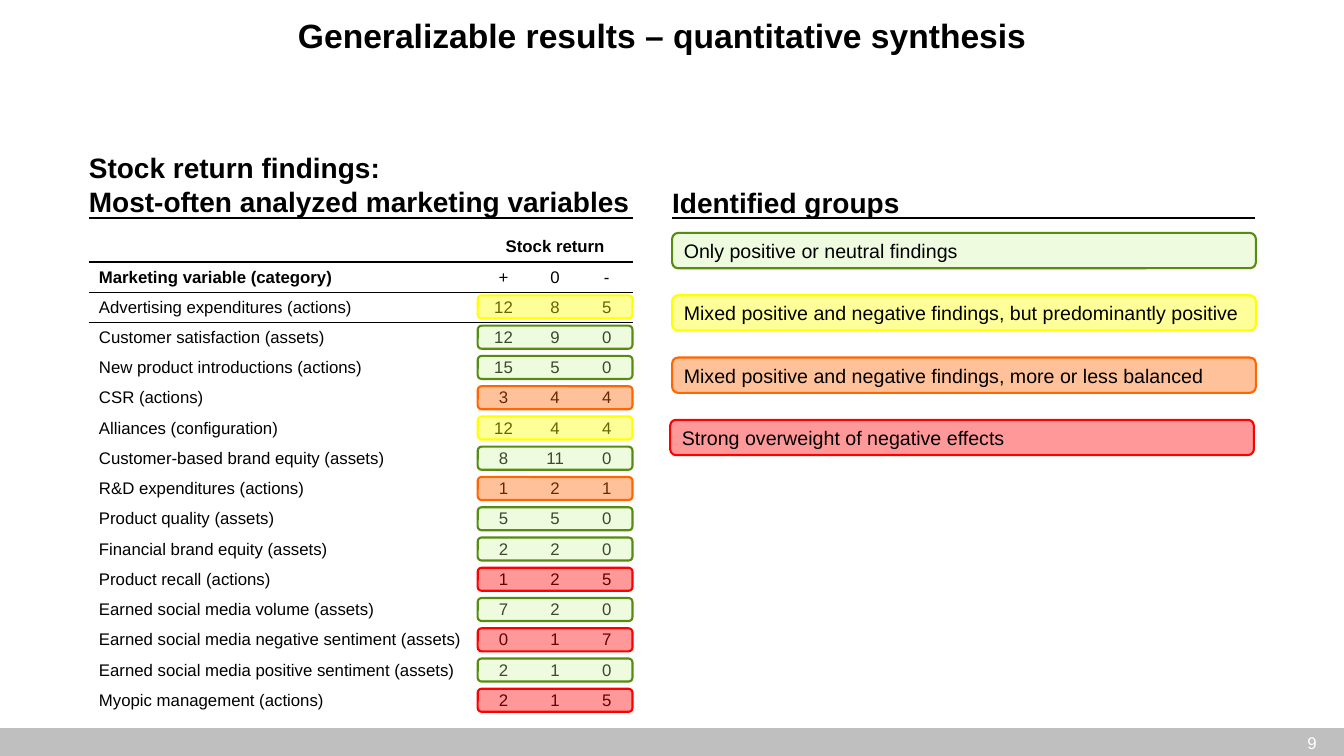
from dataclasses import dataclass

from lxml.etree import SubElement
from pptx import Presentation
from pptx.dml.color import RGBColor
from pptx.enum.shapes import MSO_CONNECTOR, MSO_SHAPE
from pptx.enum.text import MSO_ANCHOR as Anchor, MSO_AUTO_SIZE as AutoSize, PP_ALIGN as Align
from pptx.oxml import parse_xml
from pptx.oxml.ns import nsdecls, qn
from pptx.util import Cm, Pt

BLACK = "000000"
GRAY = "BFBFBF"
WHITE = "FFFFFF"
NO_GRID_STYLE = "{2D5ABB26-0587-4C30-8999-92F81FD0307C}"

LEFT, RIGHT = 2.24, 16.94
TABLE_TOP, ROW_HEIGHT = 5.84, 12.2 / 16
NAME_WIDTH, COUNT_WIDTH = 9.8, 1.3
LEGEND_TOP, LEGEND_STEP = 5.87, 1.57


@dataclass(frozen=True)
class Group:
    label: str
    fill: str
    opacity: int
    line: str
    left: float = RIGHT


@dataclass(frozen=True)
class Variable:
    name: str
    counts: tuple[int, int, int]
    group: Group


POSITIVE = Group("Only positive or neutral findings", "CAF297", 30, "568D11")
MOSTLY_POSITIVE = Group(
    "Mixed positive and negative findings, but predominantly positive", "FFFF00", 40, "FFFF00")
BALANCED = Group(
    "Mixed positive and negative findings, more or less balanced", "FF6600", 40, "FF6600")
NEGATIVE = Group("Strong overweight of negative effects", "FF0000", 40, "FF0000", 16.89)
GROUPS = [POSITIVE, MOSTLY_POSITIVE, BALANCED, NEGATIVE]

VARIABLES = [
    Variable("Advertising expenditures (actions)", (12, 8, 5), MOSTLY_POSITIVE),
    Variable("Customer satisfaction (assets)", (12, 9, 0), POSITIVE),
    Variable("New product introductions (actions)", (15, 5, 0), POSITIVE),
    Variable("CSR (actions)", (3, 4, 4), BALANCED),
    Variable("Alliances (configuration)", (12, 4, 4), MOSTLY_POSITIVE),
    Variable("Customer-based brand equity (assets)", (8, 11, 0), POSITIVE),
    Variable("R&D expenditures (actions)", (1, 2, 1), BALANCED),
    Variable("Product quality (assets)", (5, 5, 0), POSITIVE),
    Variable("Financial brand equity (assets)", (2, 2, 0), POSITIVE),
    Variable("Product recall (actions)", (1, 2, 5), NEGATIVE),
    Variable("Earned social media volume (assets)", (7, 2, 0), POSITIVE),
    Variable("Earned social media negative sentiment (assets)", (0, 1, 7), NEGATIVE),
    Variable("Earned social media positive sentiment (assets)", (2, 1, 0), POSITIVE),
    Variable("Myopic management (actions)", (2, 1, 5), NEGATIVE),
]


def rgb(color: str) -> RGBColor:
    return RGBColor.from_string(color)


def write(frame, text: str, *, size: float, color: str = BLACK, bold: bool = False,
          align=Align.LEFT, spacing: float = 1.0) -> None:
    for index, line in enumerate(text.split("\n")):
        para = frame.add_paragraph() if index else frame.paragraphs[0]
        para.alignment = align
        para.line_spacing = spacing
        span = para.add_run()
        span.text = line
        span.font.name = "Arial"
        span.font.size = Pt(size)
        span.font.bold = bold
        span.font.color.rgb = rgb(color)


def add_text(page, left: float, top: float, width: float, height: float, text: str,
             *, anchor=Anchor.TOP, **style) -> None:
    box = page.shapes.add_textbox(Cm(left), Cm(top), Cm(width), Cm(height))
    box.text_frame.word_wrap = True
    box.text_frame.vertical_anchor = anchor
    write(box.text_frame, text, **style)


def add_heading(page, left: float, top: float, width: float, height: float,
                text: str, rule_width: float) -> None:
    box = page.shapes.add_textbox(Cm(left), Cm(top), Cm(width), Cm(height))
    frame = box.text_frame
    frame.word_wrap = False
    frame.auto_size = AutoSize.SHAPE_TO_FIT_TEXT
    frame.vertical_anchor = Anchor.BOTTOM
    frame.margin_left = 0
    write(frame, text, size=20, bold=True)
    rule = page.shapes.add_connector(
        MSO_CONNECTOR.STRAIGHT, Cm(left), Cm(5.49), Cm(left + rule_width), Cm(5.49))
    rule.line.color.rgb = rgb(BLACK)
    rule.line.width = Pt(1)
    SubElement(rule._element.spPr, qn("a:effectLst"))


def add_block(page, kind, left: float, top: float, width: float, height: float,
              *, fill: str, line: str, weight: float):
    block = page.shapes.add_shape(kind, Cm(left), Cm(top), Cm(width), Cm(height))
    block.shadow.inherit = False
    block.fill.solid()
    block.fill.fore_color.rgb = rgb(fill)
    block.line.color.rgb = rgb(line)
    block.line.width = Pt(weight)
    return block


def add_marker(page, group: Group, left: float, top: float, width: float, height: float):
    marker = add_block(page, MSO_SHAPE.ROUNDED_RECTANGLE, left, top, width, height,
                       fill=group.fill, line=group.line, weight=1.5)
    color = marker._element.spPr.find(qn("a:solidFill"))[0]
    SubElement(color, qn("a:alpha"), val=str(group.opacity * 1000))
    return marker


def add_border(cell, side: str) -> None:
    border = parse_xml(
        f'<a:{side} {nsdecls("a")} w="12700"><a:solidFill>'
        f'<a:srgbClr val="{BLACK}"/></a:solidFill></a:{side}>')
    cell._tc.get_or_add_tcPr().insert(0, border)


def fill_cell(cell, text: str, *, bold: bool = False, align=Align.LEFT) -> None:
    cell.vertical_anchor = Anchor.MIDDLE
    cell.margin_top = cell.margin_bottom = 0
    cell.fill.background()
    write(cell.text_frame, text, size=12, bold=bold, align=align)


def add_findings(page) -> None:
    rows = [("", "Stock return", "", ""), ("Marketing variable (category)", "+", "0", "-")]
    rows += [(variable.name, *map(str, variable.counts)) for variable in VARIABLES]
    widths = [NAME_WIDTH] + [COUNT_WIDTH] * 3
    table = page.shapes.add_table(
        len(rows), len(widths), Cm(LEFT), Cm(TABLE_TOP),
        Cm(sum(widths)), Cm(ROW_HEIGHT * len(rows))).table
    table.first_row = table.horz_banding = False
    table._tbl.tblPr.find(qn("a:tableStyleId")).text = NO_GRID_STYLE
    for column, width in zip(table.columns, widths):
        column.width = Cm(width)
    for row_index, row in enumerate(rows):
        table.rows[row_index].height = Cm(ROW_HEIGHT)
        for column_index, text in enumerate(row):
            cell = table.cell(row_index, column_index)
            fill_cell(cell, text,
                      bold=row_index == 0 or (row_index == 1 and column_index == 0),
                      align=Align.CENTER if column_index else Align.LEFT)
            if row_index < 2:
                add_border(cell, "lnB")
            if row_index in (1, 2):
                add_border(cell, "lnT")
    table.cell(0, 1).merge(table.cell(0, 3))
    for index, variable in enumerate(VARIABLES, start=2):
        add_marker(page, variable.group, LEFT + NAME_WIDTH,
                   TABLE_TOP + index * ROW_HEIGHT + 0.08, 3 * COUNT_WIDTH, 0.58)


def add_legend(page) -> None:
    for index, group in enumerate(GROUPS):
        marker = add_marker(page, group, group.left, LEGEND_TOP + index * LEGEND_STEP, 14.71, 0.89)
        marker.text_frame.vertical_anchor = Anchor.MIDDLE
        write(marker.text_frame, group.label, size=14)


def main() -> None:
    deck = Presentation()
    deck.slide_width, deck.slide_height = Cm(33.87), Cm(19.05)
    page = deck.slides.add_slide(deck.slide_layouts[6])
    add_block(page, MSO_SHAPE.RECTANGLE, 0, 18.36, 33.87, 0.69, fill=GRAY, line=GRAY, weight=1)
    add_text(page, 2.08, 0.36, 29.21, 3.68, "Generalizable results – quantitative synthesis",
             size=24, bold=True, align=Align.CENTER, spacing=0.9)
    add_text(page, 25.81, 18.21, 7.62, 1.02, "9", anchor=Anchor.MIDDLE,
             size=12, color=WHITE, align=Align.RIGHT)
    add_heading(page, LEFT, 3.66, 13.97, 1.96,
                "Stock return findings:\nMost-often analyzed marketing variables", 13.7)
    add_heading(page, RIGHT, 4.52, 6.02, 1.12, "Identified groups", 14.68)
    add_findings(page)
    add_legend(page)
    deck.save("out.pptx")


if __name__ == "__main__":
    main()
